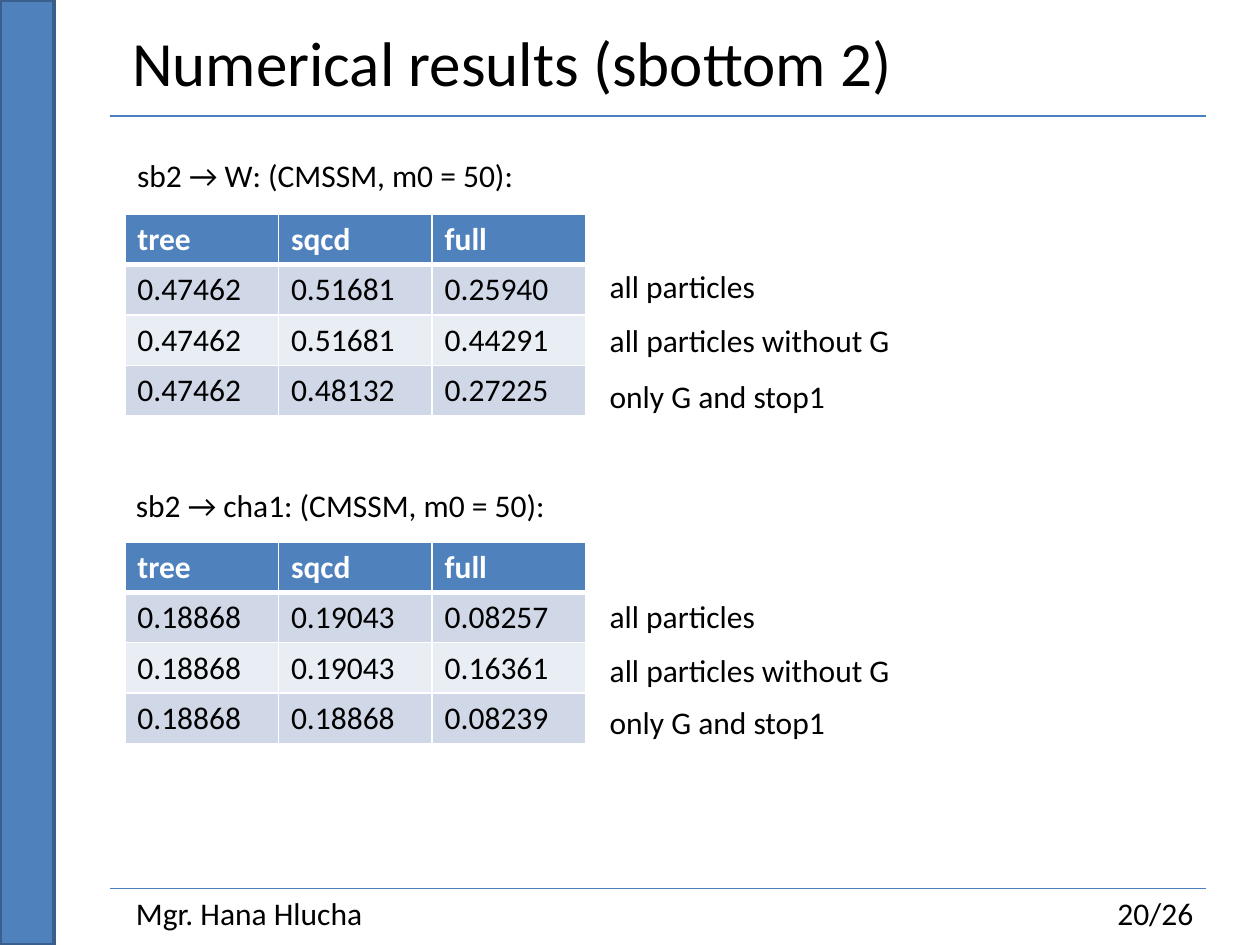
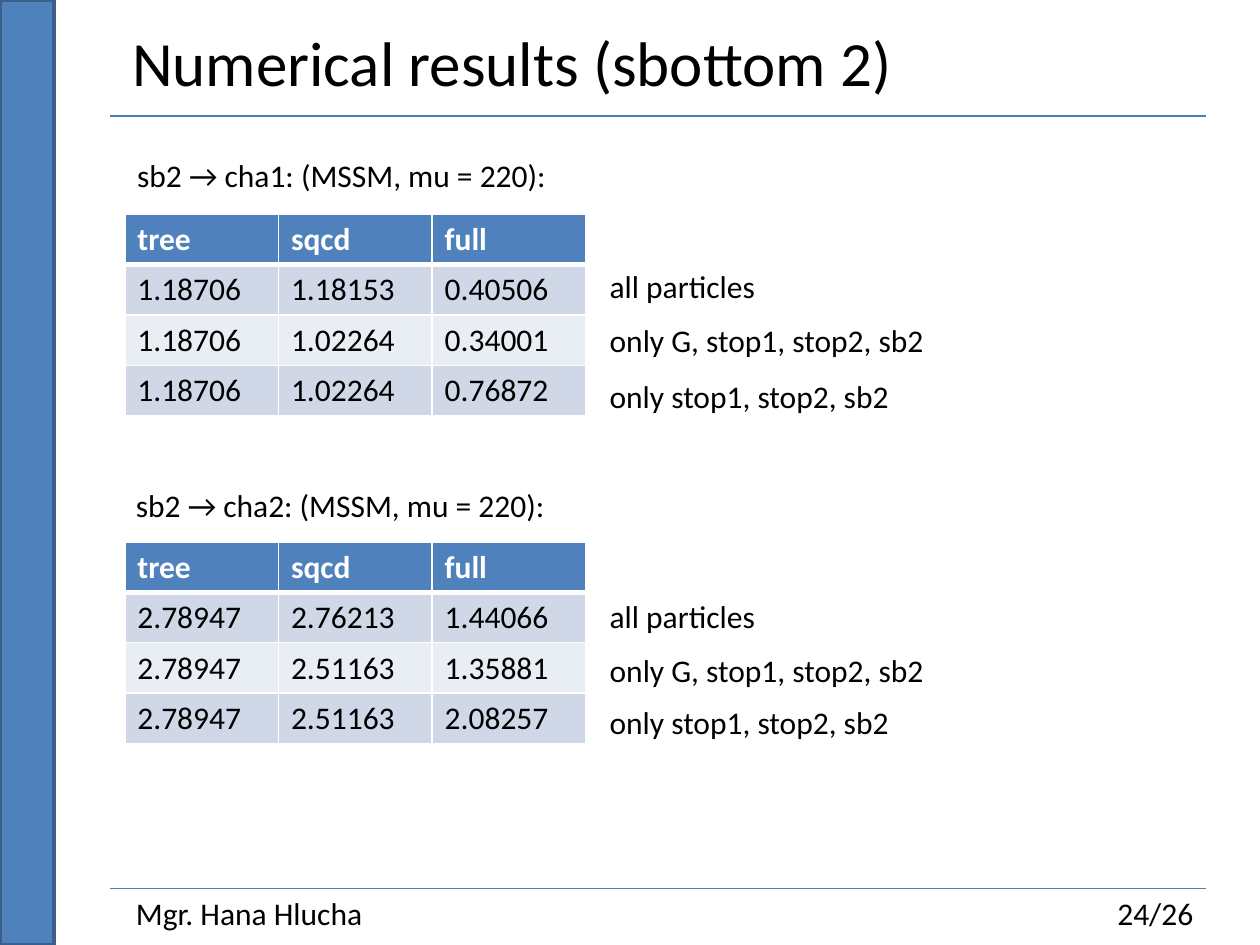
from lxml import etree
from pptx import Presentation
from pptx.dml.color import RGBColor
from pptx.enum.shapes import MSO_CONNECTOR, MSO_SHAPE
from pptx.enum.text import MSO_AUTO_SIZE, PP_ALIGN
from pptx.oxml.ns import qn
from pptx.util import Inches, Pt

RECTANGLE = MSO_SHAPE.RECTANGLE
STRAIGHT = MSO_CONNECTOR.STRAIGHT
FIT_TEXT = MSO_AUTO_SIZE.SHAPE_TO_FIT_TEXT
LEFT, RIGHT = PP_ALIGN.LEFT, PP_ALIGN.RIGHT

FONT = "Calibri"
COLORS = {
    "band": "4F81BD", "band_edge": "3A5F8C", "rule": "4B7EBC",
    "text": "000000", "white": "FFFFFF",
    "odd_row": "D0D8E8", "even_row": "E9EDF4",
}
TITLE = "Numerical results (sbottom 2)"
AUTHOR = "Mgr. Hana Hlucha"
HEADER = ["tree", "sqcd", "full"]
COLUMN_WIDTH, ROW_HEIGHT = 1.22, 0.4

# Per block: heading left and top, table top, tops of the row labels
BLOCKS = [
    (0.99, 1.19, 1.7, [2.07, 2.5, 2.94]),
    (0.98, 3.81, 4.3, [4.69, 5.12, 5.53]),
]

# Texts that are placed on the slide come with the width of their box
SLIDES = [
    {
        "number": "20/26",
        "labels": [("all particles", 1.37), ("all particles without G", 2.45),
                   ("only G and stop1", 1.93)],
        "results": [
            (("sb2 → W: (CMSSM, m0 = 50):", 3.22),
             [["0.47462", "0.51681", "0.25940"],
              ["0.47462", "0.51681", "0.44291"],
              ["0.47462", "0.48132", "0.27225"]]),
            (("sb2 → cha1: (CMSSM, m0 = 50):", 3.49),
             [["0.18868", "0.19043", "0.08257"],
              ["0.18868", "0.19043", "0.16361"],
              ["0.18868", "0.18868", "0.08239"]]),
        ],
    },
    {
        "number": "24/26",
        "labels": [("all particles", 1.37), ("only G, stop1, stop2, sb2", 2.72),
                   ("only stop1, stop2, sb2", 2.44)],
        "results": [
            (("sb2 → cha1: (MSSM, mu = 220):", 3.49),
             [["1.18706", "1.18153", "0.40506"],
              ["1.18706", "1.02264", "0.34001"],
              ["1.18706", "1.02264", "0.76872"]]),
            (("sb2 → cha2: (MSSM, mu = 220):", 3.49),
             [["2.78947", "2.76213", "1.44066"],
              ["2.78947", "2.51163", "1.35881"],
              ["2.78947", "2.51163", "2.08257"]]),
        ],
    },
]


def add_run(paragraph, text, size=18, color="text", bold=False):
    run = paragraph.add_run()
    run.text = text
    run.font.name = FONT
    run.font.size = Pt(size)
    run.font.bold = bold
    run.font.color.rgb = RGBColor.from_string(COLORS[color])


def add_text(slide, text, left, top, width, height=0.4, size=18, align=LEFT):
    box = slide.shapes.add_textbox(Inches(left), Inches(top), Inches(width), Inches(height))
    box.text_frame.word_wrap = False
    box.text_frame.auto_size = FIT_TEXT
    paragraph = box.text_frame.paragraphs[0]
    paragraph.alignment = align
    add_run(paragraph, text, size)


presentation = Presentation()
presentation.slide_width = Inches(10)
presentation.slide_height = Inches(7.5)

for content in SLIDES:
    slide = presentation.slides.add_slide(presentation.slide_layouts[6])

    # Side band
    band = slide.shapes.add_shape(RECTANGLE, 0, 0, Inches(0.43), presentation.slide_height)
    band.shadow.inherit = False
    band.fill.solid()
    band.fill.fore_color.rgb = RGBColor.from_string(COLORS["band"])
    band.line.color.rgb = RGBColor.from_string(COLORS["band_edge"])
    band.line.width = Pt(2)

    # Footer, rules and title
    add_text(slide, content["number"], 8.76, 7.05, 0.81, align=RIGHT)
    add_text(slide, AUTHOR, 0.98, 7.05, 2.02)
    for rule_top in (7.05, 0.92):
        rule = slide.shapes.add_connector(
            STRAIGHT, Inches(0.87), Inches(rule_top), Inches(9.57), Inches(rule_top))
        rule.line.color.rgb = RGBColor.from_string(COLORS["rule"])
        rule.line.width = Pt(0.75)
        etree.SubElement(rule._element.spPr, qn("a:effectLst"))
    add_text(slide, TITLE, 0.95, 0.14, 6.3, 0.71, size=36)

    for block, result in zip(BLOCKS, content["results"]):
        heading_left, heading_top, table_top, label_tops = block
        (heading, heading_width), values = result
        add_text(slide, heading, heading_left, heading_top, heading_width)

        # Result table
        rows = [HEADER] + values
        table = slide.shapes.add_table(
            len(rows), len(HEADER), Inches(0.99), Inches(table_top),
            Inches(COLUMN_WIDTH * len(HEADER)), Inches(ROW_HEIGHT * len(rows))).table
        for column in table.columns:
            column.width = Inches(COLUMN_WIDTH)
        for row_index, row in enumerate(rows):
            table.rows[row_index].height = Inches(ROW_HEIGHT)
            is_header = row_index == 0
            if is_header:
                fill = "band"
            else:
                fill = "odd_row" if row_index % 2 else "even_row"
            # The border below the header is thicker than the others
            borders = {"lnL": 1, "lnR": 1, "lnT": 3 if row_index == 1 else 1,
                       "lnB": 3 if is_header else 1}
            for column_index, text in enumerate(row):
                cell = table.cell(row_index, column_index)
                properties = cell._tc.get_or_add_tcPr()
                for side, width in borders.items():
                    border = etree.SubElement(properties, qn(f"a:{side}"), w=str(Pt(width)))
                    border_fill = etree.SubElement(border, qn("a:solidFill"))
                    etree.SubElement(border_fill, qn("a:srgbClr"), val=COLORS["white"])
                cell.fill.solid()
                cell.fill.fore_color.rgb = RGBColor.from_string(COLORS[fill])
                add_run(cell.text_frame.paragraphs[0], text,
                        color="white" if is_header else "text", bold=is_header)

        # Row labels
        for (label, label_width), label_top in zip(content["labels"], label_tops):
            add_text(slide, label, 4.74, label_top, label_width)

presentation.save("out.pptx")
